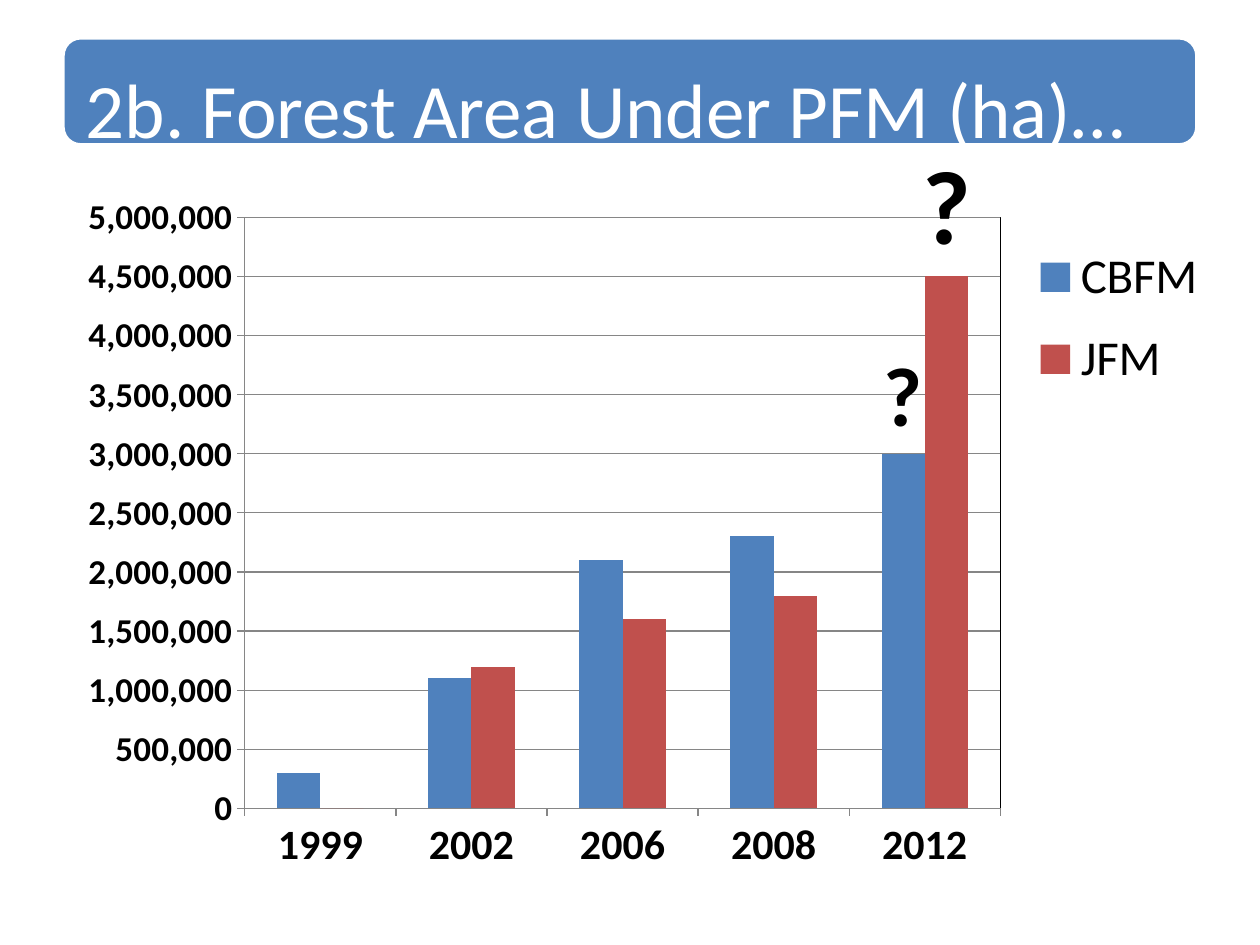
from lxml.etree import SubElement
from pptx import Presentation
from pptx.chart.data import CategoryChartData
from pptx.dml.color import RGBColor
from pptx.enum.chart import XL_CHART_TYPE, XL_LABEL_POSITION, XL_LEGEND_POSITION, XL_TICK_MARK
from pptx.enum.shapes import MSO_SHAPE
from pptx.enum.text import MSO_ANCHOR, MSO_AUTO_SIZE, PP_ALIGN
from pptx.oxml import parse_xml
from pptx.oxml.ns import nsdecls, qn
from pptx.util import Inches, Pt

BLUE, RED, GREY, WHITE, BLACK = "4F81BD", "C0504D", "868686", "FFFFFF", "000000"
TITLE_BOX = [Inches(side) for side in (0.5, 0.3, 9, 0.85)]
CHART_BOX = [Inches(side) for side in (0.35, 1.15, 9.37, 5.98)]
YEARS = ["1999", "2002", "2006", "2008", "2012"]
FOREST_AREAS = [
    ("CBFM ", [300000, 1100000, 2100000, 2300000, 3000000], BLUE, 48),
    ("JFM", [0, 1200000, 1600000, 1800000, 4500000], RED, 60),
]


def color(hex_code):
    """Turn a hex string into a colour."""
    return RGBColor.from_string(hex_code)


def style_font(font, size, hex_code=BLACK, bold=False):
    """Set face, size, colour and weight of a font."""
    font.name, font.size, font.bold = "Calibri", Pt(size), bold
    font.color.rgb = color(hex_code)


def style_line(line, hex_code, width):
    """Set colour and width of a line."""
    line.color.rgb = color(hex_code)
    line.width = Pt(width)


def add_banner(slide, wording):
    """Draw the rounded banner and set the title on it."""
    banner = slide.shapes.add_shape(MSO_SHAPE.ROUNDED_RECTANGLE, *TITLE_BOX)
    banner.shadow.inherit = False
    banner.fill.solid()
    banner.fill.fore_color.rgb = color(BLUE)
    style_line(banner.line, WHITE, 2)
    title = slide.shapes.title
    banner.element.addnext(title.element)
    title.left, title.top, title.width, title.height = TITLE_BOX
    frame = title.text_frame
    frame.auto_size, frame.word_wrap = MSO_AUTO_SIZE.NONE, True
    frame.vertical_anchor = MSO_ANCHOR.MIDDLE
    frame.margin_left = frame.margin_right = Inches(0.18)
    frame.margin_top, frame.margin_bottom = Inches(0.26), 0
    paragraph = frame.paragraphs[0]
    paragraph.alignment = PP_ALIGN.LEFT
    run = paragraph.add_run()
    run.text = wording
    style_font(run.font, 44, WHITE)


def set_layout(part, shares, inner=False):
    """Place a chart part by shares of the chart's size."""
    layout = part.find(qn("c:layout"))
    if layout is None:
        layout = parse_xml(f"<c:layout {nsdecls('c')}/>")
        anchor = part.find(qn("c:legendPos"))
        if anchor is None:
            part.insert(0, layout)
        else:
            anchor.addnext(layout)
    manual = SubElement(layout, qn("c:manualLayout"))
    settings = [("layoutTarget", "inner")] if inner else []
    settings += [("xMode", "edge"), ("yMode", "edge"), *zip("xywh", shares)]
    for tag, setting in settings:
        SubElement(manual, qn(f"c:{tag}")).set("val", str(setting))


def outline_plot(plot_area):
    """Give the plot area a thin black outline."""
    plot_area.append(parse_xml(
        f"<c:spPr {nsdecls('c', 'a')}><a:noFill/><a:ln w='9525'><a:solidFill>"
        f"<a:srgbClr val='{BLACK}'/></a:solidFill></a:ln></c:spPr>"))


def style_axis(axis, size):
    """Format the labels, ticks and line of an axis."""
    style_font(axis.tick_labels.font, size, bold=True)
    axis.major_tick_mark = XL_TICK_MARK.OUTSIDE
    style_line(axis.format.line, GREY, 0.75)


def mark_last_year(series, size):
    """Put a question mark over the last column of a series."""
    label = series.points[len(YEARS) - 1].data_label
    run = label.text_frame.paragraphs[0].add_run()
    run.text = "?"
    style_font(run.font, size, bold=True)
    label.position = XL_LABEL_POSITION.OUTSIDE_END


def add_area_chart(slide):
    """Add the clustered columns of forest area by year."""
    chart_data = CategoryChartData(number_format="#,##0")
    chart_data.categories = YEARS
    for name, areas, _, _ in FOREST_AREAS:
        chart_data.add_series(name, areas)
    chart = slide.shapes.add_chart(XL_CHART_TYPE.COLUMN_CLUSTERED, *CHART_BOX, chart_data).chart
    chart.has_title = False
    style_font(chart.font, 10)
    columns = chart.plots[0]
    columns.gap_width, columns.overlap, columns.vary_by_categories = 150, 0, False
    for series, (_, _, fill, mark_size) in zip(columns.series, FOREST_AREAS):
        series.format.fill.solid()
        series.format.fill.fore_color.rgb = color(fill)
        mark_last_year(series, mark_size)
    style_axis(chart.category_axis, 24)
    area_axis = chart.value_axis
    style_axis(area_axis, 20)
    area_axis.minimum_scale, area_axis.maximum_scale, area_axis.major_unit = 0, 5000000, 500000
    area_axis.tick_labels.number_format = "#,##0"
    area_axis.tick_labels.number_format_is_linked = False
    style_line(area_axis.major_gridlines.format.line, GREY, 0.75)
    chart.has_legend = True
    legend = chart.legend
    legend.position, legend.include_in_layout = XL_LEGEND_POSITION.RIGHT, False
    style_font(legend.font, 28)
    plot_area = chart.element.find(f".//{qn('c:plotArea')}")
    set_layout(plot_area, (0.17, 0.09, 0.64, 0.79), inner=True)
    outline_plot(plot_area)
    set_layout(chart.element.find(f".//{qn('c:legend')}"), (0.83, 0.1, 0.17, 0.25))


def main():
    """Build and save the slide."""
    deck = Presentation()
    deck.slide_width, deck.slide_height = Inches(10), Inches(7.5)
    slide = deck.slides.add_slide(deck.slide_layouts[5])
    add_banner(slide, "2b. Forest Area Under PFM (ha)…")
    add_area_chart(slide)
    deck.save("out.pptx")


if __name__ == "__main__":
    main()
